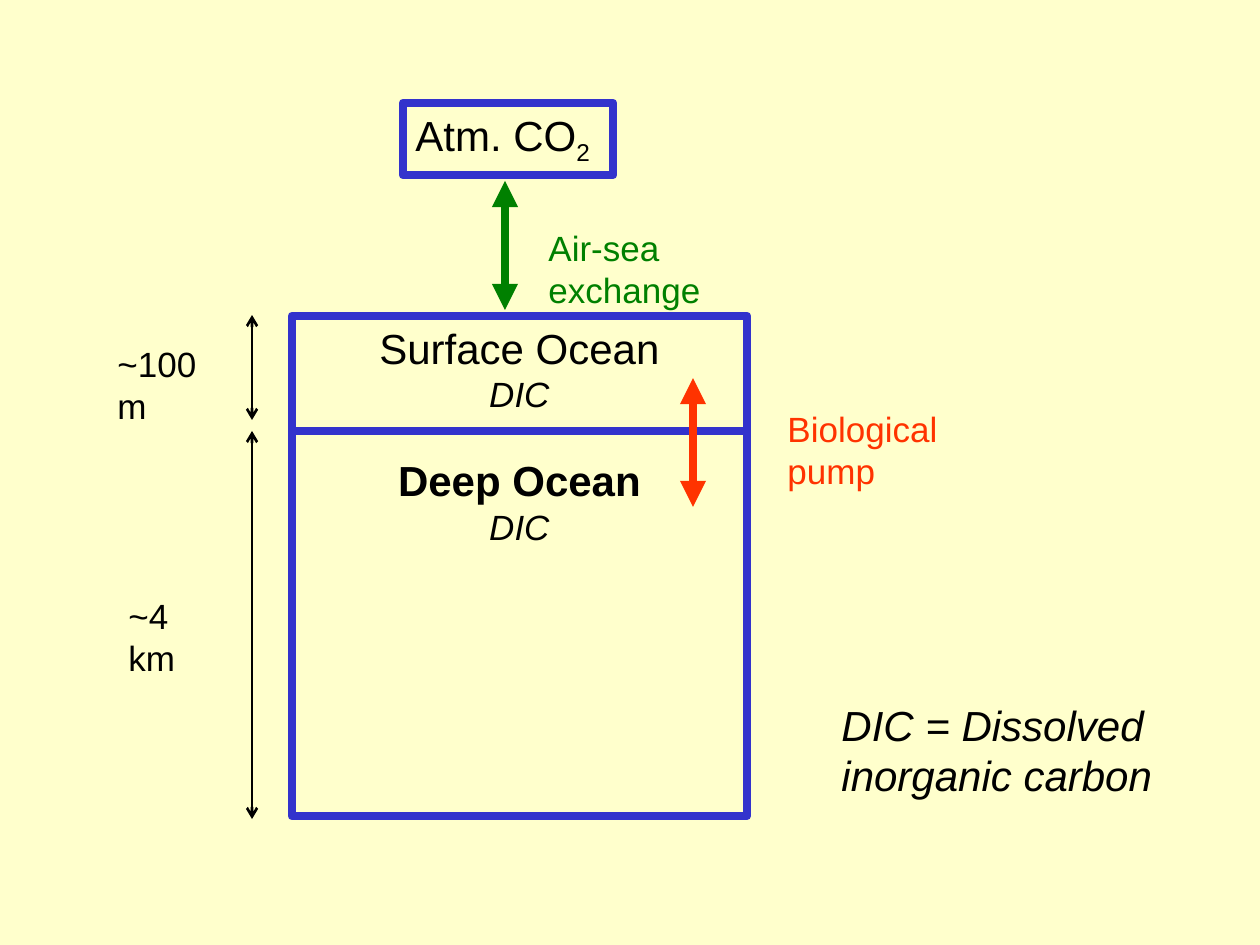
import dataclasses

import lxml.etree
import pptx
import pptx.dml.color
import pptx.enum.shapes
import pptx.enum.text
import pptx.oxml.ns
import pptx.util

EMU_PER_PX = 914400 / 126


@dataclasses.dataclass(frozen=True)
class Theme:
    """Colours, font and type sizes of the slide."""
    background: str = "FFFFCC"
    ocean: str = "3333CC"
    exchange: str = "008000"
    pump: str = "FF3300"
    ink: str = "000000"
    font: str = "Arial"
    large: int = 24
    small: int = 20
    paragraph_gap: int = 23
    box_line: float = 5
    divider_line: float = 4.5
    depth_line: float = 1.5


THEME = Theme()


def px(*lengths):
    """Turn pixel lengths into EMU."""
    return [pptx.util.Emu(round(length * EMU_PER_PX)) for length in lengths]


def rgb(colour):
    """Turn a hex string into a colour."""
    return pptx.dml.color.RGBColor.from_string(colour)


def apply_format(target, values):
    """Set each named value as an attribute of the target."""
    for name, value in values.items():
        setattr(target, name, value)


def add_run(paragraph, text, size, colour=THEME.ink, **styles):
    """Add a run in the theme font."""
    run = paragraph.add_run()
    run.text = text
    apply_format(run.font, {"name": THEME.font, "size": pptx.util.Pt(size), **styles})
    run.font.color.rgb = rgb(colour)
    return run


def next_paragraph(text_frame):
    """Return the first paragraph while it is unused, else a new one."""
    first = text_frame.paragraphs[0]
    return text_frame.add_paragraph() if first.runs else first


def add_box(slide, left, top, width, height):
    """Add an unfilled outlined box and return its text frame."""
    shape = slide.shapes.add_shape(
        pptx.enum.shapes.MSO_SHAPE.RECTANGLE, *px(left, top, width, height))
    shape.shadow.inherit = False
    shape.fill.background()
    shape.line.color.rgb = rgb(THEME.ocean)
    shape.line.width = pptx.util.Pt(THEME.box_line)
    apply_format(shape.text_frame, {
        "word_wrap": True,
        "vertical_anchor": pptx.enum.text.MSO_ANCHOR.TOP,
    })
    shape.text_frame.paragraphs[0].alignment = pptx.enum.text.PP_ALIGN.LEFT
    return shape.text_frame


def add_label(slide, bounds, lines, size, colour=THEME.ink, **styles):
    """Add a text box with one paragraph per line."""
    text_frame = slide.shapes.add_textbox(*px(*bounds)).text_frame
    text_frame.word_wrap = False
    for line in lines:
        add_run(next_paragraph(text_frame), line, size, colour, **styles)


def add_line(slide, start, end, colour, width, arrowhead=None):
    """Add a straight line, with the same arrowhead at both ends if named."""
    connector = slide.shapes.add_connector(
        pptx.enum.shapes.MSO_CONNECTOR.STRAIGHT, *px(*start, *end))
    connector.line.color.rgb = rgb(colour)
    connector.line.width = pptx.util.Pt(width)
    if arrowhead:
        outline = connector.line._get_or_add_ln()
        for tag in ("a:headEnd", "a:tailEnd"):
            lxml.etree.SubElement(outline, pptx.oxml.ns.qn(tag), type=arrowhead)
    properties = connector._element.spPr
    lxml.etree.SubElement(properties, pptx.oxml.ns.qn("a:effectLst"))


def add_atmosphere(slide):
    """Add the atmosphere box with its subscript."""
    paragraph = add_box(slide, 403, 103, 210, 72).paragraphs[0]
    add_run(paragraph, "Atm. CO", THEME.large)
    subscript = add_run(paragraph, "2", THEME.large)
    subscript.font._element.set("baseline", "-25000")


def add_ocean(slide):
    """Add the ocean box with its two named layers."""
    text_frame = add_box(slide, 292, 316, 455, 500)
    layers = (("Surface Ocean", False, 0), ("Deep Ocean", True, THEME.paragraph_gap))
    for name, bold, gap in layers:
        heading = next_paragraph(text_frame)
        heading.space_before = pptx.util.Pt(gap)
        add_run(heading, name, THEME.large, bold=bold)
        add_run(text_frame.add_paragraph(), "DIC", THEME.small, italic=True)
    for paragraph in text_frame.paragraphs:
        paragraph.alignment = pptx.enum.text.PP_ALIGN.CENTER


def main():
    """Build the carbon box model slide."""
    presentation = pptx.Presentation()
    presentation.slide_width, presentation.slide_height = px(1260, 945)
    slide = presentation.slides.add_slide(presentation.slide_layouts[6])
    slide.background.fill.solid()
    slide.background.fill.fore_color.rgb = rgb(THEME.background)

    add_atmosphere(slide)
    add_ocean(slide)
    add_line(slide, (294, 431), (746, 431), THEME.ocean, THEME.divider_line)

    fluxes = (
        ("Air-sea exchange", (536, 220, 297, 54), 505, 181, 310, THEME.exchange),
        ("Biological pump", (775, 401, 272, 54), 693, 378, 507, THEME.pump),
    )
    for name, bounds, x, top, bottom, colour in fluxes:
        add_line(slide, (x, top), (x, bottom), colour, THEME.box_line, "triangle")
        add_label(slide, bounds, [name], THEME.small, colour)

    depths = (
        ("~100 m", (105, 336, 142, 54), 315, 420),
        ("~4 km", (116, 588, 121, 54), 431, 819),
    )
    for name, bounds, top, bottom in depths:
        add_label(slide, bounds, [name], THEME.small)
        add_line(slide, (252, top), (252, bottom), THEME.ink, THEME.depth_line, "arrow")

    add_label(slide, (829, 693, 336, 113),
              ["DIC = Dissolved", "inorganic carbon"], THEME.large, italic=True)
    presentation.save("out.pptx")


if __name__ == "__main__":
    main()
